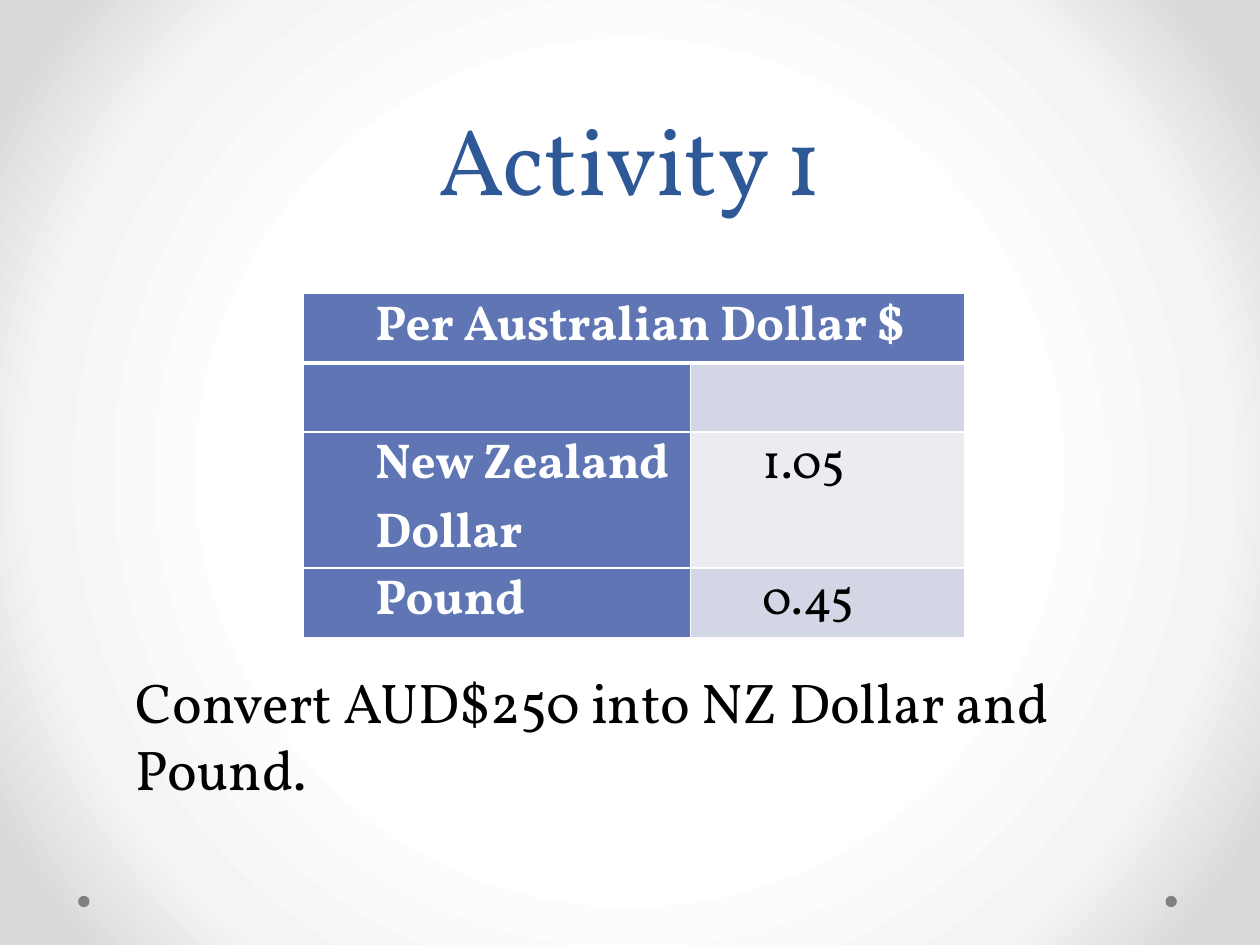
from dataclasses import dataclass

from lxml import etree
from pptx import Presentation
from pptx.dml.color import RGBColor
from pptx.enum import shapes, text
from pptx.oxml import parse_xml
from pptx.oxml.ns import nsdecls, qn
from pptx.util import Inches, Pt


@dataclass(frozen=True)
class Theme:
    font: str = "Vollkorn"
    title: str = "2F5897"
    ink: str = "000000"
    white: str = "FFFFFF"
    header: str = "6076B4"
    bands: tuple = ("D2D6E5", "EAECF2")
    dot: str = "808080"
    backdrop: tuple = ((50, "FFFFFF"), (76, "F4F4F4"), (92, "DADADA"))
    title_size: int = 54
    body_size: int = 32
    table_size: int = 28


class Deck:
    def __init__(self, theme):
        self.theme = theme
        self.file = Presentation()
        self.file.slide_width, self.file.slide_height = Inches(10), Inches(7.5)
        self.slide = self.file.slides.add_slide(self.file.slide_layouts[6])

    def background(self):
        stops = "".join(
            f'<a:gs pos="{place * 1000}"><a:srgbClr val="{color}"/></a:gs>'
            for place, color in self.theme.backdrop
        )
        backdrop = parse_xml(
            f'<p:bg {nsdecls("p", "a")}><p:bgPr><a:gradFill><a:gsLst>{stops}</a:gsLst>'
            '<a:path path="circle"><a:fillToRect l="50000" t="50000" r="50000" b="50000"/>'
            '</a:path></a:gradFill><a:effectLst/></p:bgPr></p:bg>'
        )
        self.slide.element.cSld.insert(0, backdrop)

    def paint(self, target, color):
        target.fill.solid()
        target.fill.fore_color.rgb = RGBColor.from_string(color)

    def run(self, paragraph, words, size, color, bold=False):
        font_run = paragraph.add_run()
        font_run.text = words
        font = font_run.font
        font.name, font.size, font.bold = self.theme.font, Pt(size), bold
        font.color.rgb = RGBColor.from_string(color)

    def dot(self, left, top, size):
        mark = self.slide.shapes.add_shape(
            shapes.MSO_SHAPE.OVAL, Inches(left), Inches(top), Inches(size), Inches(size)
        )
        mark.shadow.inherit = False
        mark.line.fill.background()
        self.paint(mark, self.theme.dot)

    def words(self, box, content, size, color, anchor=text.MSO_ANCHOR.TOP,
              align=text.PP_ALIGN.LEFT, spacing=None):
        frame = self.slide.shapes.add_textbox(*map(Inches, box)).text_frame
        frame.word_wrap = True
        frame.vertical_anchor = anchor
        paragraph = frame.paragraphs[0]
        paragraph.alignment = align
        paragraph.line_spacing = spacing
        self.run(paragraph, content, size, color)

    def border(self, cell, side, width):
        properties = cell._tc.get_or_add_tcPr()
        line = etree.SubElement(properties, qn(f"a:ln{side}"), w=str(Pt(width)))
        fill = etree.SubElement(line, qn("a:solidFill"))
        etree.SubElement(fill, qn("a:srgbClr"), val=self.theme.white)

    def cell(self, cell, content, fill, color, bold, bottom):
        for side in "LRTB":
            self.border(cell, side, bottom if side == "B" else 1)
        self.paint(cell, fill)
        cell.margin_left = cell.margin_right = Inches(0.07)
        cell.margin_top = cell.margin_bottom = 0
        if content:
            paragraph = cell.text_frame.paragraphs[0]
            paragraph._p.get_or_add_pPr().set("marL", str(Inches(0.5)))
            self.run(paragraph, content, self.theme.table_size, color, bold)

    def rates(self, left, top, widths, heights, rows):
        theme = self.theme
        table = self.slide.shapes.add_table(
            len(rows), len(widths), Inches(left), Inches(top),
            Inches(sum(widths)), Inches(sum(heights))
        ).table
        for column, width in zip(table.columns, widths):
            column.width = Inches(width)
        for r, labels in enumerate(rows):
            table.rows[r].height = Inches(heights[r])
            for c, label in enumerate(labels):
                heading = r == 0 or c == 0
                self.cell(
                    table.cell(r, c), label,
                    theme.header if heading else theme.bands[(r - 1) % 2],
                    theme.white if heading else theme.ink,
                    heading, 3 if r == 0 else 1,
                )
        table.cell(0, 0).merge(table.cell(0, len(widths) - 1))


def main():
    theme = Theme()
    deck = Deck(theme)
    deck.background()
    for left in (9.25, 0.62):
        deck.dot(left, 7.11, 0.09)
    deck.words((0.5, 0, 9, 1.75), "Activity 1", theme.title_size, theme.title,
               text.MSO_ANCHOR.BOTTOM, text.PP_ALIGN.CENTER, Pt(58))
    deck.rates(2.41, 2.33, (3.07, 2.18), (0.55, 0.55, 1.08, 0.55), [
        ("Per Australian Dollar $", ""),
        ("", ""),
        ("New Zealand Dollar", "1.05"),
        ("Pound", "0.45"),
    ])
    deck.words((0.98, 5.25, 8.11, 1.48), "Convert AUD$250 into NZ Dollar and Pound.",
               theme.body_size, theme.ink)
    deck.file.save("out.pptx")


if __name__ == "__main__":
    main()
